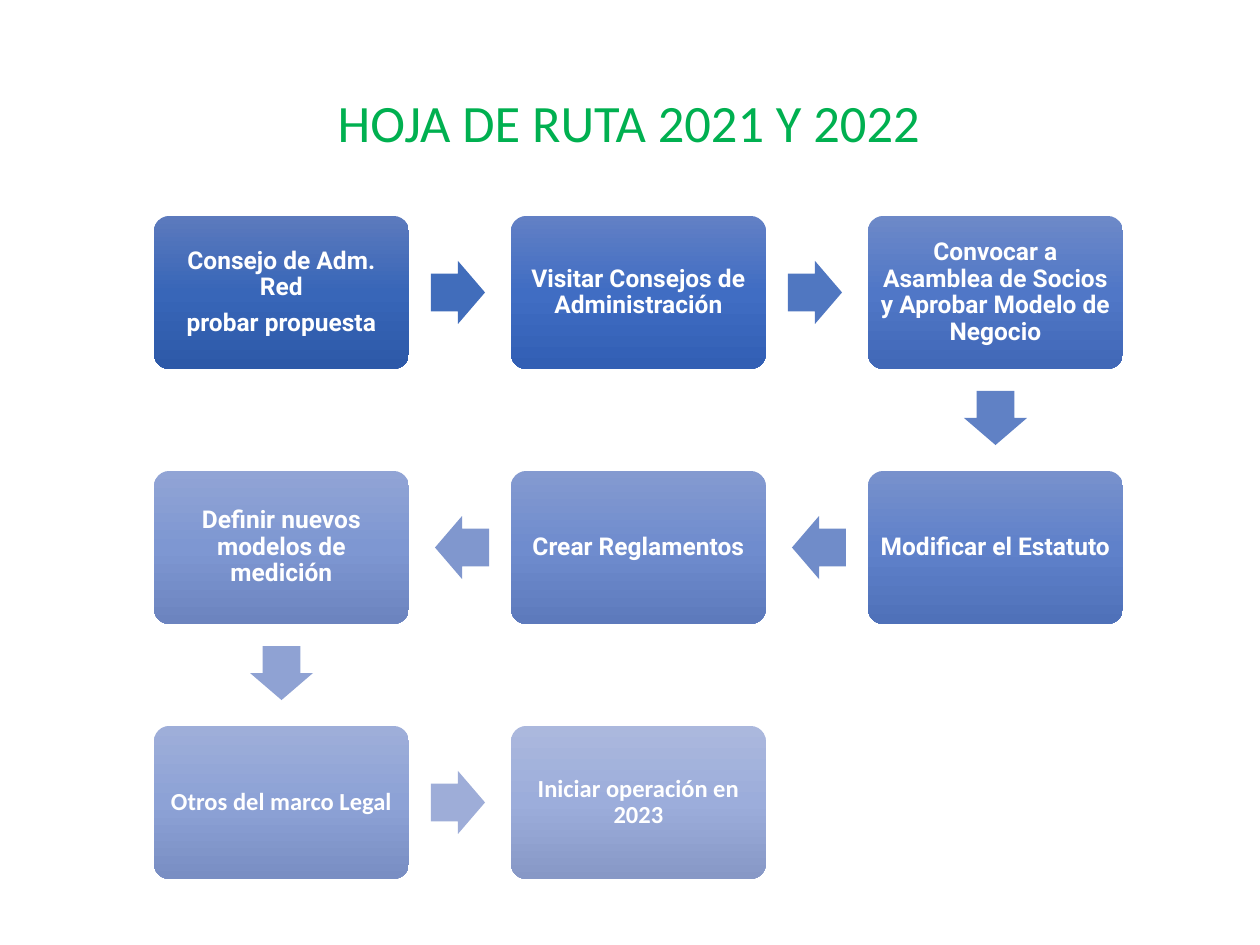
import copy
from pptx import Presentation, util as u
from pptx.dml.color import RGBColor
from pptx.enum import shapes, text
from pptx.oxml.ns import qn

PX = 914400 / 126
COLORS = {"title": "00B050", "text": "FFFFFF"}


def px(n):
    return u.Emu(round(n * PX))


def write(sp, lines, font, size, color, bold, inset):
    tf = sp.text_frame
    tf.word_wrap = True
    tf.vertical_anchor = text.MSO_ANCHOR.MIDDLE
    tf.margin_left = tf.margin_right = tf.margin_top = tf.margin_bottom = px(inset)
    for i, line in enumerate(lines):
        p = tf.add_paragraph() if i else tf.paragraphs[0]
        p.text = line
        p.alignment = text.PP_ALIGN.CENTER
        p.line_spacing = 0.9
        if i:
            p.space_before = u.Pt(5.5)
        p.font.name, p.font.size, p.font.bold = font, u.Pt(size), bold
        p.font.color.rgb = RGBColor.from_string(color)


prs = Presentation()
prs.slide_width, prs.slide_height = px(1260), px(945)
s = prs.slides.add_slide(prs.slide_layouts[6])

# Title
sp = s.shapes.add_textbox(px(86), px(67), px(1086), px(117))
write(sp, ["HOJA DE RUTA 2021 Y 2022"], "Calibri", 30, COLORS["title"], False, 8)

# Steps: column, row, lines, font, gradient, colour of the arrow that follows
steps = [
    (0, 0, ["Consejo de Adm. Red", "probar propuesta"], "Roboto",
     ["5C7ABD", "3866B8", "2D59A8"], "416DBB"),
    (1, 0, ["Visitar Consejos de Administración"], "Roboto",
     ["6280C5", "406DC3", "325FB4"], "5077C1"),
    (2, 0, ["Convocar a Asamblea de Socios y Aprobar Modelo de Negocio"], "Roboto",
     ["6D89C8", "5077C7", "4168B7"], "6081C5"),
    (2, 1, ["Modificar el Estatuto"], "Roboto",
     ["7891CC", "5F81CA", "4F71B9"], "708CC9"),
    (1, 1, ["Crear Reglamentos"], "Roboto",
     ["849AD0", "6F8CCE", "5D7ABC"], "8097CE"),
    (0, 1, ["Definir nuevos modelos de medición"], "Roboto",
     ["91A4D5", "7E97D2", "6C84BF"], "8FA2D3"),
    (0, 2, ["Otros del marco Legal"], "Calibri",
     ["9EAED9", "8DA2D6", "798EC3"], "9EADD8"),
    (1, 2, ["Iniciar operación en 2023"], "Calibri",
     ["ABB8DD", "9CADDB", "8798C6"], None),
]
LEFT, TOP, STEP_X, STEP_Y = 154, 216, 357, 255
BOX_W, BOX_H = 255, 153
ARROW_W, ARROW_H, ARROW_GAP = 54, 63, 49

for i, (col, row, lines, font, gradient, arrow_color) in enumerate(steps):
    x, y = LEFT + col * STEP_X, TOP + row * STEP_Y

    # Box with a three-stop vertical gradient
    sp = s.shapes.add_shape(shapes.MSO_SHAPE.ROUNDED_RECTANGLE,
                            px(x), px(y), px(BOX_W), px(BOX_H))
    sp.adjustments[0] = 0.1
    sp.shadow.inherit = False
    sp.line.fill.background()
    sp.fill.gradient()
    sp.fill.gradient_angle = 270
    stops = sp._element.spPr.find(qn("a:gradFill")).find(qn("a:gsLst"))
    stops.append(copy.deepcopy(stops[-1]))
    for stop, position, color in zip(sp.fill.gradient_stops, (0, 0.5, 1), gradient):
        stop.position = position
        stop.color.rgb = RGBColor.from_string(color)
    # Narrower side insets are needed only where a word group must share a line
    write(sp, lines, font, 14, COLORS["text"], True, 7)
    if i == 0:
        sp.text_frame.margin_left = sp.text_frame.margin_right = px(16)

    # Arrow toward the next step
    if arrow_color:
        dx, dy = steps[i + 1][0] - col, steps[i + 1][1] - row
        cx = x + BOX_W / 2 + dx * (BOX_W / 2 + ARROW_GAP)
        cy = y + BOX_H / 2 + dy * (BOX_H / 2 + ARROW_GAP)
        sp = s.shapes.add_shape(shapes.MSO_SHAPE.RIGHT_ARROW,
                                px(cx - ARROW_W / 2), px(cy - ARROW_H / 2),
                                px(ARROW_W), px(ARROW_H))
        sp.adjustments[0], sp.adjustments[1] = 0.6, 0.5
        sp.rotation = 90 if dy else 180 if dx < 0 else 0
        sp.shadow.inherit = False
        sp.line.fill.background()
        sp.fill.solid()
        sp.fill.fore_color.rgb = RGBColor.from_string(arrow_color)

prs.save("out.pptx")
